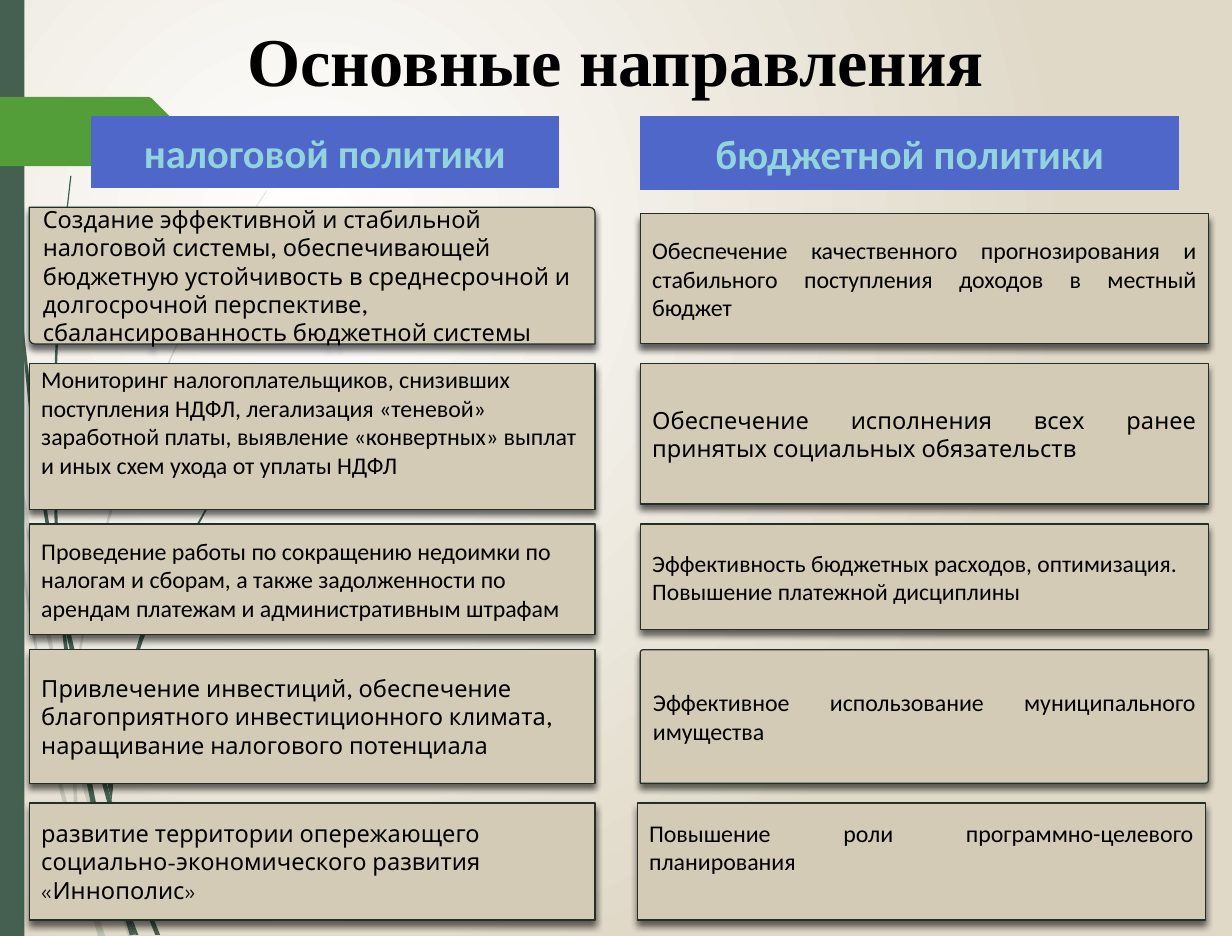
from lxml import etree
from pptx import Presentation
from pptx.dml.color import RGBColor
from pptx.enum.shapes import MSO_SHAPE
from pptx.enum.text import MSO_ANCHOR, PP_ALIGN
from pptx.oxml.ns import qn
from pptx.util import Inches, Pt

RECT = MSO_SHAPE.RECTANGLE
CARD = MSO_SHAPE.ROUND_2_DIAG_RECTANGLE
SLANT = MSO_SHAPE.PARALLELOGRAM
MIDDLE = MSO_ANCHOR.MIDDLE
LEFT, CENTER, JUSTIFY = PP_ALIGN.LEFT, PP_ALIGN.CENTER, PP_ALIGN.JUSTIFY

BLACK = RGBColor(0x00, 0x00, 0x00)
WHITE = RGBColor(0xFF, 0xFF, 0xFF)
CREAM = RGBColor(0xE0, 0xD9, 0xC8)
SAND = RGBColor(0xD3, 0xCB, 0xB6)
EDGE = RGBColor(0x22, 0x30, 0x28)
PINE = RGBColor(0x45, 0x5F, 0x51)
GREEN = RGBColor(0x54, 0x9E, 0x39)
BLUE = RGBColor(0x4E, 0x67, 0xC8)
AQUA = RGBColor(0x92, 0xD3, 0xDC)

SERIF, SANS, ROUND = "Times New Roman", "Calibri", "League Spartan"
INSET = 0.05
LINE = 0.24  # one line of card text, inches

# Blades of grass: outlines in hundredths of an inch
FAINT = [
    [(8, 360), (6, 331), (0, 290), (0, 308), (7, 354)],
    [(41, 537), (59, 616), (60, 603), (44, 535), (10, 355), (12, 387)],
    [(65, 624), (62, 613), (62, 628), (87, 714), (106, 773), (109, 773), (90, 712)],
    [(84, 773), (87, 773), (74, 732)],
    [(66, 703), (49, 637), (22, 483), (12, 387), (8, 360), (20, 483), (46, 639),
     (65, 714), (71, 735), (70, 728)],
    [(59, 616), (61, 665), (66, 703), (68, 712), (74, 732), (73, 727), (64, 664),
     (62, 628), (62, 626)],
    [(62, 600), (67, 537), (78, 475), (94, 416), (113, 359), (161, 252), (189, 204),
     (220, 158), (220, 157), (189, 203), (161, 251), (111, 358), (92, 415),
     (76, 474), (65, 536), (60, 600), (60, 603), (62, 613)],
    [(71, 735), (81, 773), (84, 773)],
    [(62, 626), (62, 628), (62, 613), (60, 603), (59, 617)],
    [(68, 712), (66, 703), (70, 728), (71, 735), (84, 773), (74, 732)],
]
DARK = [
    [(5, 113), (14, 240), (27, 366), (47, 490), (48, 495), (46, 471), (46, 466),
     (30, 365), (16, 239), (6, 113), (4, 50), (3, 0), (2, 0), (3, 50)],
    [(74, 609), (89, 664), (89, 650), (78, 608), (50, 486), (54, 520)],
    [(95, 668), (92, 660), (93, 675), (111, 728), (128, 771), (132, 771), (114, 726)],
    [(92, 711), (82, 676), (61, 572), (54, 520), (48, 491), (57, 573), (78, 678),
     (93, 729), (99, 743), (97, 738)],
    [(50, 486), (49, 466), (45, 359), (49, 252), (53, 198), (59, 145), (58, 145),
     (52, 198), (47, 252), (43, 359), (46, 462), (50, 485)],
    [(112, 771), (114, 771), (102, 739)],
    [(48, 491), (54, 520), (50, 486), (50, 485), (46, 462), (46, 467)],
    [(93, 652), (96, 610), (105, 568), (118, 528), (133, 490), (172, 418), (194, 385),
     (206, 369), (219, 354), (194, 384), (171, 417), (131, 488), (115, 526),
     (103, 567), (93, 608), (89, 649), (92, 660)],
    [(99, 743), (107, 771), (110, 771)],
    [(89, 664), (92, 711), (97, 727), (102, 739), (101, 736), (93, 675), (91, 670)],
    [(89, 663), (93, 675), (92, 660), (89, 650)],
    [(97, 727), (92, 711), (97, 738), (99, 743), (110, 771), (112, 771), (102, 739)],
]
TAG = [(151, 110), (125, 136), (123, 137), (0, 137), (0, 80), (123, 80), (125, 81),
       (151, 107)]

# Grid of cards, in percent of the slide
COLS = [(2.38, 45.92), (51.97, 46.1)]
ROWS = [22.15, 38.86, 56, 69.43, 85.8]


def write(frame, text, font=SANS, size=14.2, color=BLACK, bold=False,
          align=LEFT, wrap=True, foot=INSET):
    """Fill a text frame, one paragraph per line; foot is the bottom inset."""
    frame.word_wrap = wrap
    frame.vertical_anchor = MIDDLE
    frame.margin_left = frame.margin_right = Inches(0.1)
    frame.margin_top, frame.margin_bottom = Inches(INSET), Inches(foot)
    for i, line in enumerate(text.split("\n")):
        para = frame.add_paragraph() if i else frame.paragraphs[0]
        para.alignment = align
        run = para.add_run()
        run.text = line
        run.font.name, run.font.size = font, Pt(size)
        run.font.color.rgb, run.font.bold = color, bold


class Deck:
    def __init__(self):
        self.show = Presentation()
        self.show.slide_width = Inches(10.16)
        self.show.slide_height = Inches(7.72)
        self.slide = self.show.slides.add_slide(self.show.slide_layouts[5])

    def area(self, *box):
        """Turn percent of the slide into lengths."""
        full = (self.show.slide_width, self.show.slide_height) * 2
        return [int(part * size / 100) for part, size in zip(box, full)]

    def back(self):
        fill = self.slide.background.fill
        fill.gradient()
        for stop, color, pos in zip(fill.gradient_stops, (WHITE, CREAM), (0, 1)):
            stop.color.rgb, stop.position = color, pos
        grad = self.slide.element.find(".//" + qn("a:gradFill"))
        grad.remove(grad.find(qn("a:lin")))
        ring = etree.SubElement(grad, qn("a:path"), path="circle")
        etree.SubElement(ring, qn("a:fillToRect"), l="50000", t="50000", r="100000", b="100000")

    def paint(self, shape, color):
        shape.shadow.inherit = False
        shape.fill.solid()
        shape.fill.fore_color.rgb = color
        shape.line.fill.background()
        return shape

    def block(self, kind, box, color, adj=()):
        shape = self.slide.shapes.add_shape(kind, *self.area(*box))
        for i, part in enumerate(adj):
            shape.adjustments[i] = part
        return self.paint(shape, color)

    def form(self, pts, color, alpha=100):
        """Draw a closed outline given in hundredths of an inch."""
        pen = self.slide.shapes.build_freeform(*pts[0], scale=Inches(0.01))
        pen.add_line_segments(pts[1:])
        shape = self.paint(pen.convert_to_shape(), color)
        if alpha < 100:
            tint = shape.element.spPr.find(qn("a:solidFill"))[0]
            etree.SubElement(tint, qn("a:alpha"), val=str(alpha * 1000))

    def title(self, text, box):
        head = self.slide.shapes.title
        head.left, head.top, head.width, head.height = self.area(*box)
        write(head.text_frame, text, font=SERIF, size=40.6, bold=True, align=CENTER, wrap=False)

    def label(self, text, box, size):
        shape = self.block(SLANT, box, BLUE, adj=(0,))
        write(shape.text_frame, text, size=size, color=AQUA, bold=True, align=CENTER)

    def card(self, col, row, high, text, drop=0, shift=0, adj=(0, 0), **style):
        """Place a card in the grid; drop and shift nudge it in percent."""
        left, wide = COLS[col]
        shape = self.block(CARD, (left + shift, ROWS[row] + drop, wide, high), SAND, adj)
        shape.line.color.rgb, shape.line.width = EDGE, Pt(0.75)
        glow = etree.SubElement(
            shape.element.spPr.find(qn("a:effectLst")), qn("a:outerShdw"),
            blurRad=str(Pt(4)), dist=str(Pt(3)), dir="5400000", rotWithShape="0")
        tint = etree.SubElement(glow, qn("a:srgbClr"), val=str(BLACK))
        etree.SubElement(tint, qn("a:alpha"), val="60000")
        write(shape.text_frame, text, align=JUSTIFY if col else LEFT, **style)


def main():
    deck = Deck()
    deck.back()
    for blades, alpha in ((FAINT, 20), (DARK, 100)):
        for pts in blades:
            deck.form(pts, PINE, alpha)
    deck.block(RECT, (0, 0, 1.99, 100), PINE)
    deck.form(TAG, GREEN)
    deck.title("Основные направления", (18.7, 1.3, 62.5, 10.1))

    soft = {"font": ROUND, "size": 14}
    tail = {"foot": INSET + LINE}
    deck.card(1, 0, 13.9, "Обеспечение качественного прогнозирования и "
              "стабильного поступления доходов в местный бюджет", drop=0.65)
    deck.card(1, 1, 15, "Обеспечение исполнения всех ранее принятых "
              "социальных обязательств", **soft)
    deck.card(1, 2, 11.27, "Эффективность бюджетных расходов, оптимизация.\n"
              "Повышение платежной дисциплины", size=14)
    deck.card(1, 3, 14.25, "Эффективное использование муниципального имущества", adj=(0.02, 0))
    deck.card(1, 4, 12.5, "Повышение роли программно-целевого планирования", shift=-0.25, **tail)

    deck.card(0, 0, 14.6, "Создание эффективной и стабильной налоговой системы, "
              "обеспечивающей бюджетную устойчивость в среднесрочной и долгосрочной "
              "перспективе, сбалансированность бюджетной системы", adj=(0, 0.04), **soft)
    deck.card(0, 1, 15.54, "Мониторинг налогоплательщиков, снизивших поступления НДФЛ, "
              "легализация «теневой» заработной платы, выявление «конвертных» выплат "
              "и иных схем ухода от уплаты НДФЛ", **tail)
    deck.card(0, 2, 11.79, "Проведение работы по сокращению недоимки по налогам и сборам, "
              "а также задолженности по арендам платежам и административным штрафам")
    deck.card(0, 3, 14.25, "Привлечение инвестиций, обеспечение благоприятного "
              "инвестиционного климата, наращивание налогового потенциала", **soft)
    deck.card(0, 4, 12.5, "развитие территории опережающего "
              "социально-экономического развития «Иннополис»", **soft)

    deck.label("налоговой политики", (7.38, 12.36, 37.99, 7.77), 24)
    deck.label("бюджетной политики", (51.97, 12.36, 43.75, 7.9), 24.4)
    deck.show.save("out.pptx")


if __name__ == "__main__":
    main()
